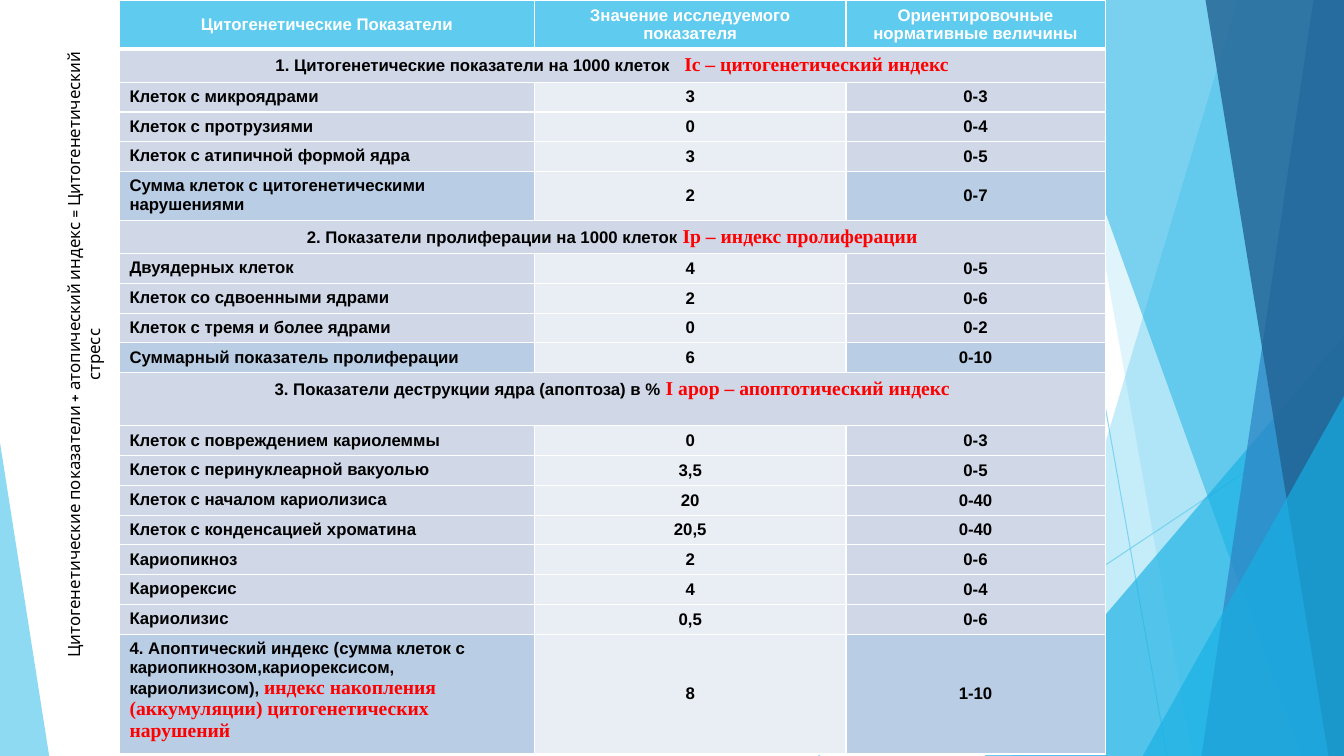
from lxml import etree
from pptx import Presentation
from pptx.dml.color import RGBColor
from pptx.enum import shapes, text
from pptx.oxml import ns
from pptx.util import Cm, Pt

WHITE = RGBColor(0xFF, 0xFF, 0xFF)
BLACK = RGBColor(0, 0, 0)
RED = RGBColor(0xFF, 0, 0)
SKY = RGBColor(0x5F, 0xCB, 0xEF)
CYAN = RGBColor(0x17, 0xB0, 0xE4)
BLUE = RGBColor(0x2E, 0x83, 0xC3)
NAVY = RGBColor(0x22, 0x62, 0x92)
BAND = RGBColor(0xD0, 0xD8, 0xE8)
PALE = RGBColor(0xE9, 0xED, 0xF4)
TOTAL = RGBColor(0xB9, 0xCD, 0xE5)

# Content: (kind, texts); the red part of a cell is a second tuple item
SIDE = "Цитогенетические показатели + атопический индекс = Цитогенетический стресс"
ROWS = [
    ("head", "Цитогенетические Показатели", "Значение исследуемого показателя",
     "Ориентировочные нормативные величины"),
    ("part", ("1. Цитогенетические показатели на 1000 клеток   ",
              "Ic – цитогенетический индекс")),
    ("item", "Клеток с микроядрами", "3", "0-3"),
    ("item", "Клеток с протрузиями", "0", "0-4"),
    ("item", "Клеток с атипичной формой ядра", "3", "0-5"),
    ("sum", "Сумма клеток с цитогенетическими нарушениями", "2", "0-7"),
    ("part", ("2. Показатели пролиферации на 1000 клеток ",
              "Ip – индекс пролиферации")),
    ("item", "Двуядерных клеток", "4", "0-5"),
    ("item", "Клеток со сдвоенными ядрами", "2", "0-6"),
    ("item", "Клеток с тремя и более ядрами", "0", "0-2"),
    ("sum", "Суммарный показатель пролиферации", "6", "0-10"),
    ("part", ("3. Показатели деструкции ядра (апоптоза) в % ",
              "I apop – апоптотический индекс")),
    ("item", "Клеток с повреждением кариолеммы", "0", "0-3"),
    ("item", "Клеток с перинуклеарной вакуолью", "3,5", "0-5"),
    ("item", "Клеток с началом кариолизиса", "20", "0-40"),
    ("item", "Клеток с конденсацией хроматина", "20,5", "0-40"),
    ("item", "Кариопикноз", "2", "0-6"),
    ("item", "Кариорексис", "4", "0-4"),
    ("item", "Кариолизис", "0,5", "0-6"),
    ("sum", ("4. Апоптический индекс (сумма клеток с кариопикнозом,кариорексисом, "
             "кариолизисом), ",
             "индекс накопления (аккумуляции) цитогенетических нарушений"), "8", "1-10"),
]
COLS = [10.46, 7.85, 6.53]
LOW = 0.75  # height of a one-line row
HIGH = {0: 1.24, 1: 0.83, 5: 1.24, 6: 0.83, 11: 1.34, 19: 3.02}
FILLS = {"head": [SKY] * 3, "part": [BAND] * 3,
         "item": [BAND, PALE, BAND], "sum": [TOTAL, PALE, TOTAL]}

# Backdrop, back to front
WIDE, TALL = 33.87, 19.05
LINES = [(26.04, 0, 29.41, TALL), (WIDE, 10.24, 20.62, TALL)]
PANES = [  # quad: top x, bottom x; tri: left, top, width, apex
    ("quad", (31.19, 25.5), SKY, 36),
    ("quad", (26.67, 30.05), SKY, 20),
    ("tri", (24.82, 8.46, 9.05, 1), CYAN, 66),
    ("quad", (25.93, 32.79), CYAN, 50),
    ("quad", (33.1, 30.28), BLUE, 70),
    ("quad", (30.38, 33.48), NAVY, 80),
    ("tri", (28.8, 9.98, 5.07, 1), CYAN, 66),
    ("tri", (0, 11.15, 1.24, 0), SKY, 70),
]


def fade(part, share):
    for tone in part.iter(ns.qn("a:srgbClr")):
        etree.SubElement(tone, ns.qn("a:alpha")).set("val", str(share * 1000))


def draw_line(slide, ends):
    line = slide.shapes.add_connector(shapes.MSO_CONNECTOR.STRAIGHT, *map(Cm, ends))
    line.line.color.rgb = SKY
    line.line.width = Pt(0.75)
    props = line._element.spPr
    fade(props, 70)
    etree.SubElement(props, ns.qn("a:effectLst"))


def draw_pane(slide, kind, spots, color, share):
    if kind == "quad":
        top, base = spots
        build = slide.shapes.build_freeform(Cm(top), 0)
        build.add_line_segments([(Cm(WIDE), 0), (Cm(WIDE), Cm(TALL)),
                                 (Cm(base), Cm(TALL))], close=True)
        pane = build.convert_to_shape()
    else:
        left, top, width, apex = spots
        pane = slide.shapes.add_shape(shapes.MSO_SHAPE.ISOSCELES_TRIANGLE, Cm(left),
                                      Cm(top), Cm(width), Cm(TALL - top))
        pane.adjustments[0] = apex
    pane.shadow.inherit = False
    pane.fill.solid()
    pane.fill.fore_color.rgb = color
    pane.line.fill.background()
    fade(pane._element.spPr, share)


def edge(cell, row):
    props = cell._tc.get_or_add_tcPr()
    for side in "LRTB":
        thick = (row, side) in ((0, "B"), (1, "T"))
        line = etree.SubElement(props, ns.qn("a:ln" + side))
        line.set("w", str(Pt(3 if thick else 1)))
        fill = etree.SubElement(line, ns.qn("a:solidFill"))
        etree.SubElement(fill, ns.qn("a:srgbClr")).set("val", str(WHITE))


def write(cell, words, color, align):
    para = cell.text_frame.paragraphs[0]
    para.alignment = align
    para.font.bold = True
    looks = [("Arial", 12, color), ("Times New Roman", 14, RED)]
    pieces = (words,) if isinstance(words, str) else words
    for piece, (face, size, tint) in zip(pieces, looks):
        run = para.add_run()
        run.text = piece
        font = run.font
        font.name, font.size, font.color.rgb = face, Pt(size), tint


def draw_table(slide):
    highs = [HIGH.get(row, LOW) for row in range(len(ROWS))]
    frame = slide.shapes.add_table(len(ROWS), len(COLS), Cm(3.01), 0,
                                   Cm(sum(COLS)), Cm(sum(highs)))
    table = frame.table
    table.first_row = table.horz_banding = False
    for col, width in zip(table.columns, COLS):
        col.width = Cm(width)
    for row, (kind, *texts) in enumerate(ROWS):
        table.rows[row].height = Cm(highs[row])
        for col, color in enumerate(FILLS[kind]):
            cell = table.cell(row, col)
            edge(cell, row)
            cell.fill.solid()
            cell.fill.fore_color.rgb = color
        if kind == "part":
            table.cell(row, 0).merge(table.cell(row, 2))
        for col, words in enumerate(texts):
            cell = table.cell(row, col)
            label = col == 0 and kind in ("item", "sum")
            top = label or kind == "part"
            cell.vertical_anchor = text.MSO_ANCHOR.TOP if top else text.MSO_ANCHOR.MIDDLE
            write(cell, words, WHITE if kind == "head" else BLACK,
                  text.PP_ALIGN.LEFT if label else text.PP_ALIGN.CENTER)


def draw_side(slide):
    # Turned box, placed by its centre
    width, height, mid_x, mid_y = 16.66, 1.4, 2.17, 8.94
    box = slide.shapes.add_textbox(Cm(mid_x - width / 2), Cm(mid_y - height / 2),
                                   Cm(width), Cm(height))
    box.rotation = 270
    box.text_frame.word_wrap = True
    para = box.text_frame.paragraphs[0]
    para.text = SIDE
    para.alignment = text.PP_ALIGN.CENTER
    para.font.name, para.font.size = "Cabin", Pt(12)
    para.font.color.rgb = BLACK


def main():
    deck = Presentation()
    deck.slide_width, deck.slide_height = Cm(WIDE), Cm(TALL)
    slide = deck.slides.add_slide(deck.slide_layouts[6])
    for ends in LINES:
        draw_line(slide, ends)
    for pane in PANES:
        draw_pane(slide, *pane)
    draw_table(slide)
    draw_side(slide)
    deck.save("out.pptx")


if __name__ == "__main__":
    main()
